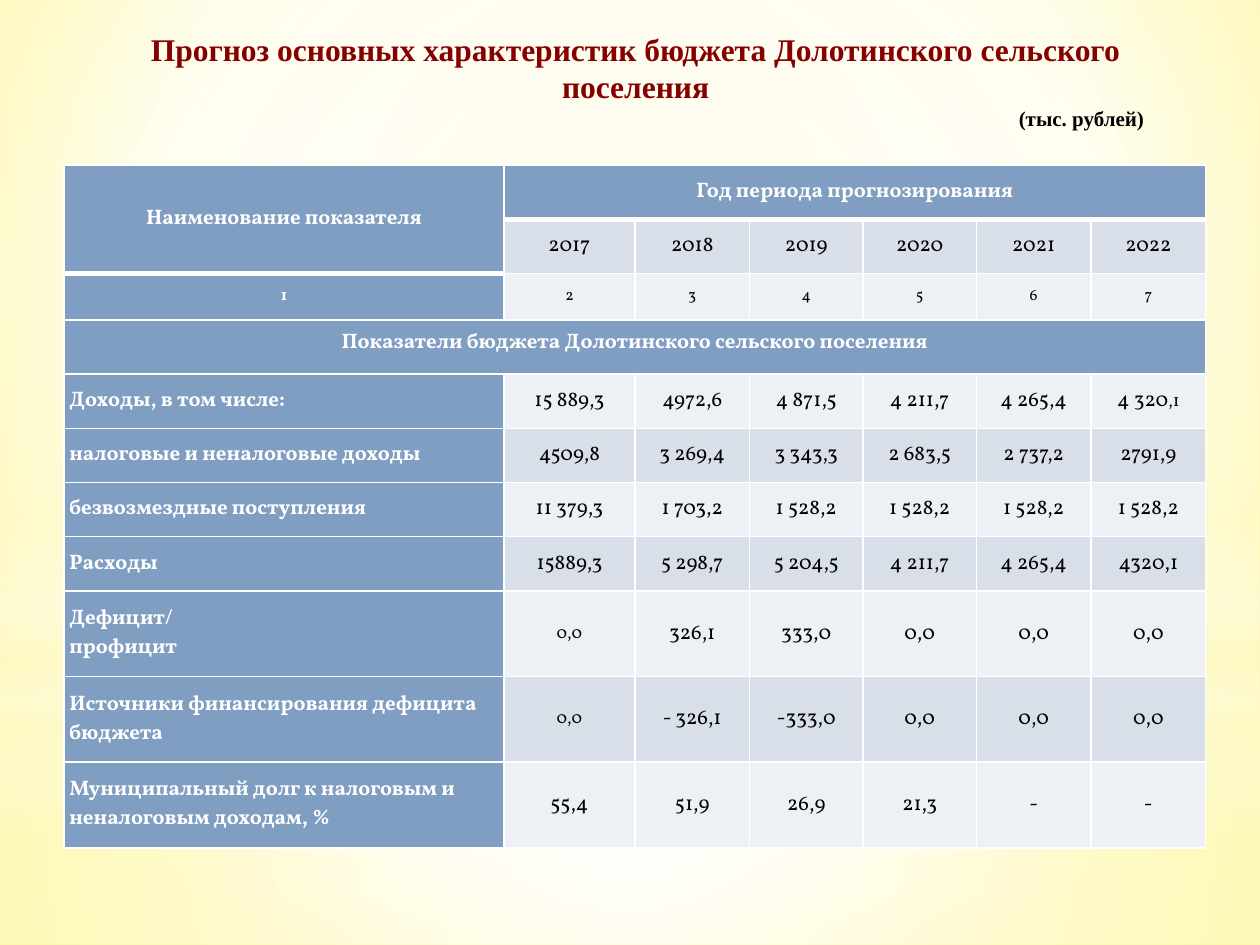
from lxml.etree import SubElement
from pptx import Presentation
from pptx.dml.color import RGBColor
from pptx.enum.shapes import MSO_SHAPE
from pptx.enum.text import MSO_ANCHOR, MSO_AUTO_SIZE, PP_ALIGN
from pptx.oxml import parse_xml
from pptx.oxml.ns import nsdecls, qn
from pptx.util import Inches, Pt

WIDTH, HEIGHT = Inches(10), Inches(7.5)
WHITE = RGBColor(0xFF, 0xFF, 0xFF)
BLACK = RGBColor(0, 0, 0)
MAROON = RGBColor(0x86, 0, 0)
BLUE = RGBColor(0x80, 0x9E, 0xC2)
BAND_DARK = RGBColor(0xD8, 0xDF, 0xE9)
BAND_LIGHT = RGBColor(0xED, 0xF0, 0xF4)
CREAM = RGBColor(0xFE, 0xFA, 0xC9)
PALE_YELLOW = RGBColor(0xFF, 0xF9, 0xB5)
YELLOW = RGBColor(0xFF, 0xF4, 0x6F)

TITLE_FONT, TABLE_FONT = "Times New Roman", "Vollkorn"
CENTRE = (50, 50, 50, 50)
COLUMNS = [3.49, 1.04, 0.91, 0.9, 0.9, 0.91, 0.91]
ROWS = [0.43, 0.43, 0.37] + [0.43] * 5 + [0.68] * 3
NUMBER_ROW, SECTION_ROW = 2, 3
SMALL_MARK = "|"
BUDGET = [
    ["Наименование показателя", "Год периода прогнозирования"],
    ["", "2017", "2018", "2019", "2020", "2021", "2022"],
    ["1", "2", "3", "4", "5", "6", "7"],
    ["Показатели бюджета Долотинского сельского поселения"],
    ["Доходы, в том числе:", "15 889,3", "4972,6", "4 871,5", "4 211,7", "4 265,4", "4 320|,1"],
    ["налоговые и неналоговые доходы", "4509,8", "3 269,4", "3 343,3", "2 683,5", "2 737,2", "2791,9"],
    ["безвозмездные поступления", "11 379,3", "1 703,2"] + ["1 528,2"] * 4,
    ["Расходы", "15889,3", "5 298,7", "5 204,5", "4 211,7", "4 265,4", "4320,1"],
    ["Дефицит/\nпрофицит", "|0,0", "326,1", "333,0", "0,0", "0,0", "0,0"],
    ["Источники финансирования дефицита бюджета", "|0,0", "- 326,1", "-333,0", "0,0", "0,0", "0,0"],
    ["Муниципальный долг к налоговым и неналоговым доходам, %", "55,4", "51,9", "26,9", "21,3", "-", "-"],
]


def add_text(p, text, font=TABLE_FONT, size=12, color=BLACK, bold=False, align=PP_ALIGN.CENTER):
    """Add a formatted run to a paragraph."""
    p.alignment = align
    r = p.add_run()
    r.text = text
    r.font.name, r.font.size, r.font.bold = font, Pt(size), bold
    r.font.color.rgb = color


def set_gradient(fill, parent, stops, focus=None):
    """Give a fill gradient stops, circular around focus or else vertical."""
    fill.gradient()
    old = parent.find(qn("a:gradFill"))
    grad = parse_xml(f'<a:gradFill {nsdecls("a")} rotWithShape="1"><a:gsLst/></a:gradFill>')
    for position, color, opacity in stops:
        gs = SubElement(grad[0], qn("a:gs"), pos=str(position * 1000))
        clr = SubElement(gs, qn("a:srgbClr"), val=str(color))
        if opacity < 100:
            SubElement(clr, qn("a:alpha"), val=str(opacity * 1000))
    if focus:
        route = SubElement(grad, qn("a:path"), path="circle")
        sides = {side: str(share * 1000) for side, share in zip("ltrb", focus)}
        SubElement(route, qn("a:fillToRect"), **sides)
    else:
        SubElement(grad, qn("a:lin"), ang="5400000", scaled="0")
    parent.replace(old, grad)


def add_glow(s, kind, top, height, stops, focus=None):
    """Add a full-width translucent shape to the backdrop."""
    sp = s.shapes.add_shape(kind, 0, Inches(top), WIDTH, Inches(height))
    sp.shadow.inherit = False
    sp.line.fill.background()
    set_gradient(sp.fill, sp.element.spPr, stops, focus)


def add_backdrop(s):
    """Paint the background and its layers of light."""
    fill = s.background.fill
    fill.gradient()
    bg_pr = s.element.cSld.find(qn("p:bg")).find(qn("p:bgPr"))
    set_gradient(fill, bg_pr, [(0, PALE_YELLOW, 100), (60, WHITE, 100), (100, YELLOW, 100)],
                 (20, 10, 20, 60))
    rect = MSO_SHAPE.RECTANGLE
    add_glow(s, rect, 5.58, 1.92, [(0, WHITE, 91), (37, WHITE, 76), (100, CREAM, 79)], CENTRE)
    add_glow(s, rect, 0, 5.58, [(0, WHITE, 89), (48, WHITE, 62), (100, CREAM, 79)], CENTRE)
    add_glow(s, rect, 4.12, 2.5, [(0, WHITE, 0), (29, WHITE, 30), (45, CREAM, 40),
                                  (55, WHITE, 26), (65, CREAM, 60), (100, WHITE, 0)])
    add_glow(s, MSO_SHAPE.OVAL, 1.75, 5.58, [(0, WHITE, 100), (56, WHITE, 0)], CENTRE)


def add_title(s):
    """Move, raise and fill the title placeholder."""
    sp = s.shapes.title
    sp.element.getparent().append(sp.element)
    sp.left, sp.top, sp.width, sp.height = map(Inches, (0.91, 0.18, 8.27, 0.91))
    tf = sp.text_frame
    tf.word_wrap = True
    tf.auto_size = MSO_AUTO_SIZE.SHAPE_TO_FIT_TEXT
    tf.vertical_anchor = MSO_ANCHOR.MIDDLE
    add_text(tf.paragraphs[0], "Прогноз основных характеристик бюджета Долотинского сельского поселения",
             font=TITLE_FONT, size=18, color=MAROON, bold=True)
    add_text(tf.add_paragraph(), "(тыс. рублей)", font=TITLE_FONT, bold=True, align=PP_ALIGN.RIGHT)


def set_borders(cell, top, bottom):
    """Draw white cell borders, with the given top and bottom widths."""
    tc_pr = cell._tc.get_or_add_tcPr()
    for i, (side, width) in enumerate(zip("LRTB", (1, 1, top, bottom))):
        tc_pr.insert(i, parse_xml(
            f'<a:ln{side} {nsdecls("a")} w="{Pt(width)}"><a:solidFill>'
            f'<a:srgbClr val="{WHITE}"/></a:solidFill></a:ln{side}>'))


def format_cell(cell, row, col):
    """Set the fill, margins and borders of a table cell."""
    heading = col == 0 or row in (0, SECTION_ROW)
    cell.fill.solid()
    cell.fill.fore_color.rgb = BLUE if heading else BAND_DARK if row % 2 else BAND_LIGHT
    cell.margin_left = cell.margin_right = Inches(0.04)
    cell.margin_top = cell.margin_bottom = Inches(0.07)
    cell.vertical_anchor = MSO_ANCHOR.TOP if row == SECTION_ROW else MSO_ANCHOR.MIDDLE
    header_end = 2 if col == 0 else 1
    set_borders(cell, 3 if row == header_end else 1, 3 if row < header_end else 1)


def fill_cell(cell, text, row, col):
    """Write a cell's text, with the part after the mark in smaller type."""
    heading = col == 0 or row == 0
    fmt = dict(color=WHITE if heading else BLACK, bold=heading,
               align=PP_ALIGN.LEFT if col == 0 and row > SECTION_ROW else PP_ALIGN.CENTER)
    tf = cell.text_frame
    for i, line in enumerate(text.split("\n")):
        p = tf.add_paragraph() if i else tf.paragraphs[0]
        main_part, _, small_part = line.partition(SMALL_MARK)
        for part, size in ((main_part, 9 if row == NUMBER_ROW else 12), (small_part, 10)):
            if part:
                add_text(p, part, size=size, **fmt)


def add_budget_table(s):
    """Add the table of budget indicators."""
    frame = s.shapes.add_table(len(ROWS), len(COLUMNS), Inches(0.51), Inches(1.31),
                               Inches(sum(COLUMNS)), Inches(sum(ROWS)))
    table = frame.table
    for column, width in zip(table.columns, COLUMNS):
        column.width = Inches(width)
    for row, height in zip(table.rows, ROWS):
        row.height = Inches(height)
    for row in range(len(ROWS)):
        for col in range(len(COLUMNS)):
            format_cell(table.cell(row, col), row, col)
    for first, last in (((0, 0), (1, 0)), ((0, 1), (0, 6)), ((SECTION_ROW, 0), (SECTION_ROW, 6))):
        table.cell(*first).merge(table.cell(*last))
    for row, texts in enumerate(BUDGET):
        for col, text in enumerate(texts):
            fill_cell(table.cell(row, col), text, row, col)


def main():
    """Build the slide and save it."""
    prs = Presentation()
    prs.slide_width, prs.slide_height = WIDTH, HEIGHT
    s = prs.slides.add_slide(prs.slide_layouts[5])
    add_backdrop(s)
    add_budget_table(s)
    add_title(s)
    prs.save("out.pptx")


if __name__ == "__main__":
    main()
